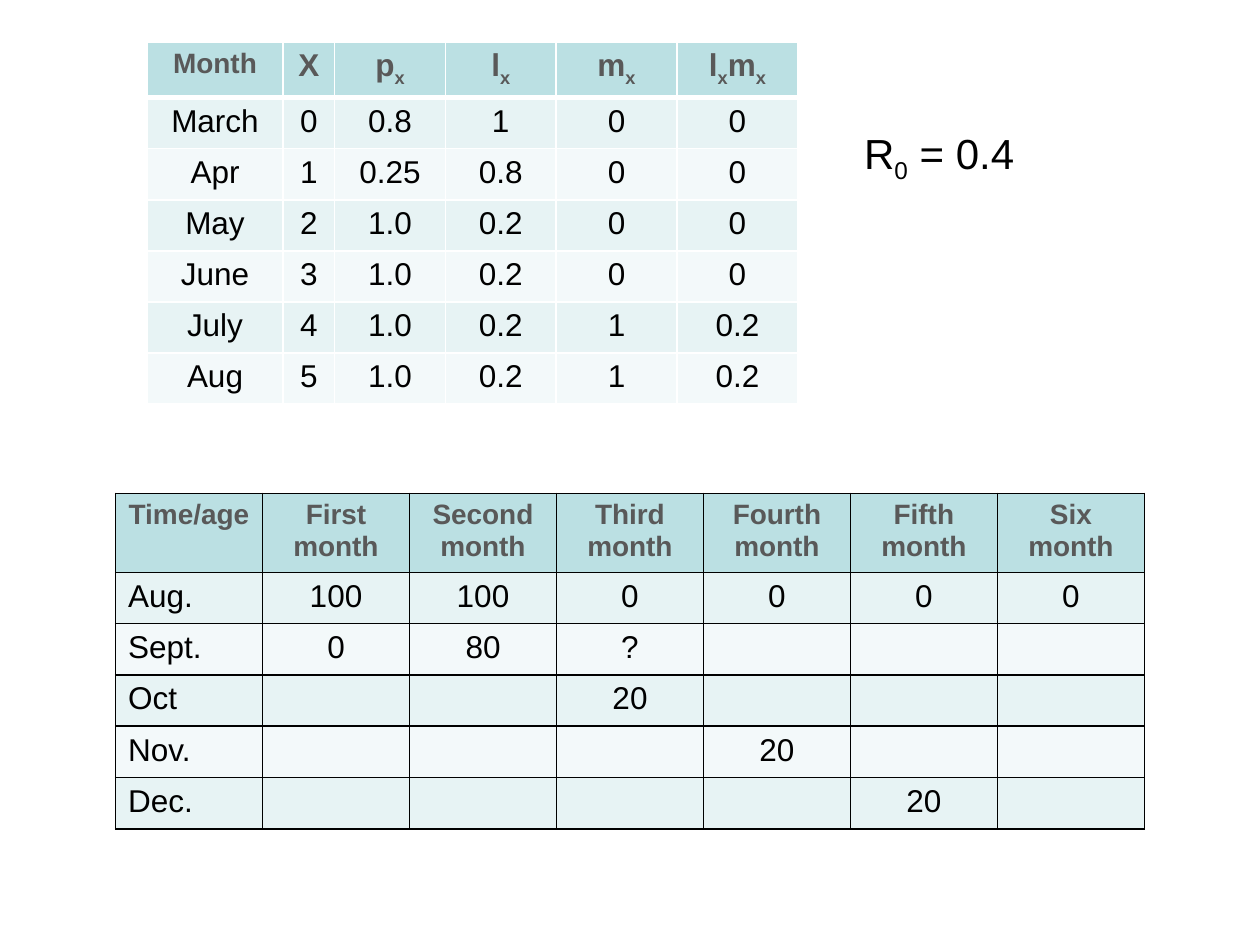
from lxml.etree import SubElement
from pptx import Presentation
from pptx.dml.color import RGBColor
from pptx.enum.text import MSO_AUTO_SIZE, PP_ALIGN
from pptx.oxml.ns import qn
from pptx.util import Inches, Pt

FONT = "Arial"
BLACK = RGBColor(0x00, 0x00, 0x00)
WHITE = RGBColor(0xFF, 0xFF, 0xFF)
GREY = RGBColor(0x59, 0x59, 0x59)
HEADER_FILL = RGBColor(0xBB, 0xE0, 0xE3)
BAND_FILLS = (RGBColor(0xE7, 0xF3, 0xF4), RGBColor(0xF3, 0xF9, 0xFA))

SLIDE_WIDTH, SLIDE_HEIGHT = Inches(10), Inches(7.5)

LIFE_ROWS = [
    ["Month", "X", "p_x", "l_x", "m_x", "l_xm_x"],
    ["March", "0", "0.8", "1", "0", "0"],
    ["Apr", "1", "0.25", "0.8", "0", "0"],
    ["May", "2", "1.0", "0.2", "0", "0"],
    ["June", "3", "1.0", "0.2", "0", "0"],
    ["July", "4", "1.0", "0.2", "1", "0.2"],
    ["Aug", "5", "1.0", "0.2", "1", "0.2"],
]
COHORT_ROWS = [
    ["Time/age", "First month", "Second month", "Third month",
     "Fourth month", "Fifth month", "Six month"],
    ["Aug.", "100", "100", "0", "0", "0", "0"],
    ["Sept.", "0", "80", "?", "", "", ""],
    ["Oct", "", "", "20", "", "", ""],
    ["Nov.", "", "", "", "20", "", ""],
    ["Dec.", "", "", "", "", "20", ""],
]


def slide_box(left, top, width, height):
    """Turn percentages of the slide's size into lengths."""
    return (int(SLIDE_WIDTH * left / 100), int(SLIDE_HEIGHT * top / 100),
            int(SLIDE_WIDTH * width / 100), int(SLIDE_HEIGHT * height / 100))


def write_text(text_frame, text, size=18, color=BLACK, bold=False,
               align=PP_ALIGN.CENTER):
    """Write one paragraph; the character after each underscore is a subscript."""
    paragraph = text_frame.paragraphs[0]
    paragraph.alignment = align
    first, *rest = text.split("_")
    pieces = [(first, False)]
    for part in rest:
        pieces += [(part[0], True), (part[1:], False)]
    for piece, subscript in pieces:
        if not piece:
            continue
        run = paragraph.add_run()
        run.text = piece
        run.font.name = FONT
        run.font.size = Pt(size)
        run.font.bold = bold
        run.font.color.rgb = color
        if subscript:
            run.font._element.set("baseline", "-25000")


def set_borders(cell, color, top=1, bottom=1):
    """Draw the cell's sides; call before filling, as lines come first in the XML."""
    properties = cell._tc.get_or_add_tcPr()
    for side, width in (("L", 1), ("R", 1), ("T", top), ("B", bottom)):
        line = SubElement(properties, qn(f"a:ln{side}"), w=str(Pt(width)))
        fill = SubElement(line, qn("a:solidFill"))
        SubElement(fill, qn("a:srgbClr"), val=str(color))


def add_data_table(slide, box, rows, column_shares, row_shares, border,
                   header_rule=1, header_sizes=None, label_align=PP_ALIGN.CENTER):
    left, top, width, height = box
    table = slide.shapes.add_table(len(rows), len(rows[0]), *box).table
    for column, share in zip(table.columns, column_shares):
        column.width = int(width * share / sum(column_shares))
    for row, share in zip(table.rows, row_shares):
        row.height = int(height * share / sum(row_shares))

    for row_index, row in enumerate(rows):
        is_header = row_index == 0
        for column_index, text in enumerate(row):
            cell = table.cell(row_index, column_index)
            set_borders(cell, border,
                        top=header_rule if row_index == 1 else 1,
                        bottom=header_rule if is_header else 1)
            cell.fill.solid()
            cell.fill.fore_color.rgb = (
                HEADER_FILL if is_header else BAND_FILLS[(row_index - 1) % 2])
            if is_header:
                write_text(cell.text_frame, text, size=header_sizes[column_index],
                           color=GREY, bold=True)
            else:
                align = label_align if column_index == 0 else PP_ALIGN.CENTER
                write_text(cell.text_frame, text, align=align)


def add_life_table(slide, box):
    add_data_table(slide, box, LIFE_ROWS, [1.08, 0.41, 0.88, 0.88, 0.96, 0.96],
                   [1] * len(LIFE_ROWS), WHITE, header_rule=3,
                   header_sizes=[16] + [18] * 5)


def add_cohort_table(slide, box):
    add_data_table(slide, box, COHORT_ROWS, [1] * 7, [0.63] + [0.41] * 5, BLACK,
                   header_sizes=[16] * 7, label_align=PP_ALIGN.LEFT)


def add_reproduction_rate(slide, box):
    text_frame = slide.shapes.add_textbox(*box).text_frame
    text_frame.word_wrap = False
    text_frame.auto_size = MSO_AUTO_SIZE.SHAPE_TO_FIT_TEXT
    write_text(text_frame, "R_0 = 0.4", size=24, align=PP_ALIGN.LEFT)


def main():
    presentation = Presentation()
    presentation.slide_width = SLIDE_WIDTH
    presentation.slide_height = SLIDE_HEIGHT
    slide = presentation.slides.add_slide(presentation.slide_layouts[6])
    add_cohort_table(slide, slide_box(9.17, 52.22, 81.67, 35.5))
    add_reproduction_rate(slide, slide_box(67.6, 12.8, 14.2, 6.67))
    add_life_table(slide, slide_box(11.67, 4.44, 51.67, 37.87))
    presentation.save("out.pptx")


if __name__ == "__main__":
    main()
